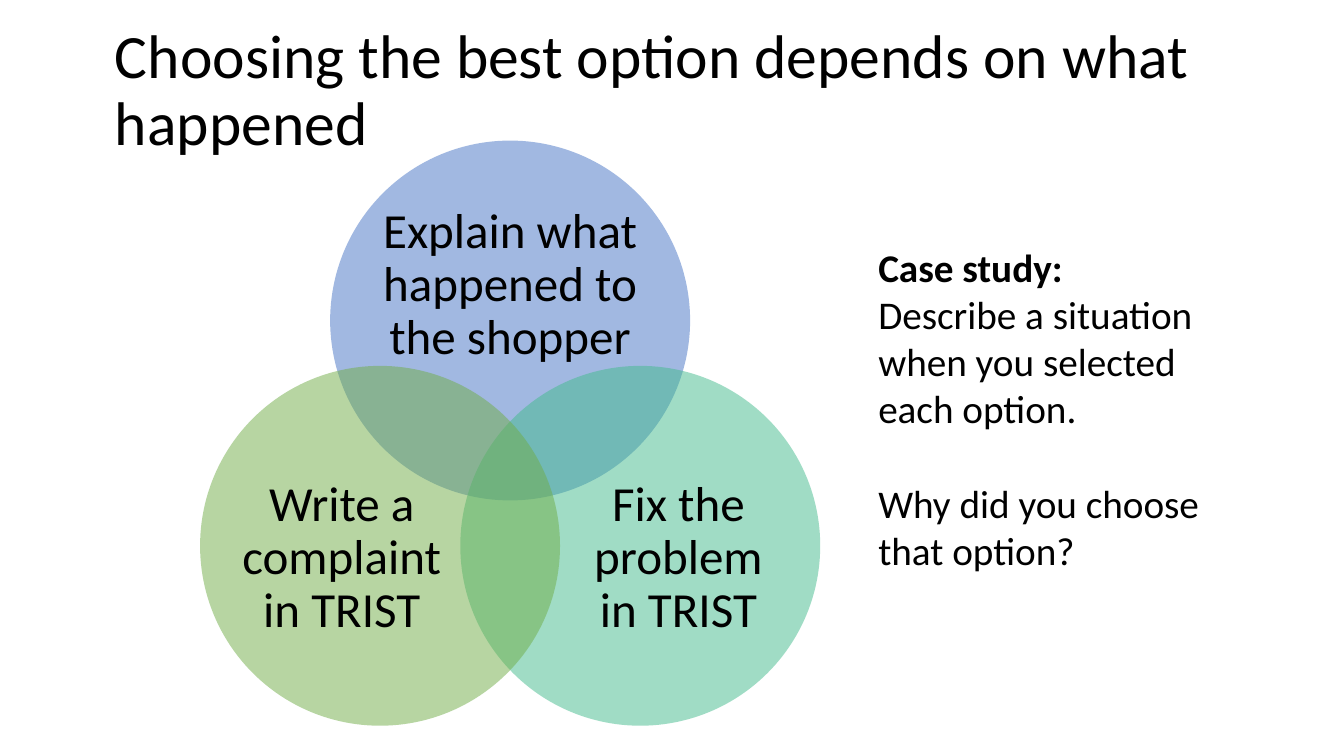
from math import cos, radians, sin

from lxml.etree import SubElement
from pptx import Presentation
from pptx.dml.color import RGBColor
from pptx.enum.shapes import MSO_SHAPE as Shape
from pptx.enum.text import MSO_ANCHOR as Anchor, MSO_AUTO_SIZE as AutoSize, PP_ALIGN as Align
from pptx.oxml.ns import qn
from pptx.util import Inches, Pt

TITLE = "Choosing the best option depends on what happened"
OPTIONS = [
    ("Explain what happened to the shopper", "4472C4", -90, (3.75, 2.03, 2.62, 1.61)),
    ("Fix the problem in TRIST", "43BB8D", 30, (5.66, 4.56, 2.14, 1.96)),
    ("Write a complaint in TRIST", "70AD47", 150, (2.32, 4.56, 2.14, 1.96)),
]
CASE_STUDY = [
    ("Case study:", True, 0),
    ("Describe a situation when you selected each option.", False, 0),
    ("Why did you choose that option?", False, 34),
]
VENN_X, VENN_Y = 5.06, 4.67
DIAMETER, OFFSET = 3.57, 1.49


def color(value):
    return RGBColor.from_string(value)


def inches(box):
    return [Inches(length) for length in box]


def add_text(paragraph, text, size, align=Align.LEFT, bold=False):
    paragraph.alignment = align
    run = paragraph.add_run()
    run.text = text
    run.font.name = "Calibri"
    run.font.size = Pt(size)
    run.font.bold = bold
    run.font.color.rgb = color("000000")


def add_panel(shapes, kind, box, fill):
    shape = shapes.add_shape(kind, *inches(box))
    shape.shadow.inherit = False
    shape.fill.solid()
    shape.fill.fore_color.rgb = color(fill)
    shape.line.fill.background()
    return shape


def add_option(group, text, fill, angle, label_box):
    left = VENN_X + OFFSET * cos(radians(angle)) - DIAMETER / 2
    top = VENN_Y + OFFSET * sin(radians(angle)) - DIAMETER / 2
    circle = add_panel(group.shapes, Shape.OVAL, (left, top, DIAMETER, DIAMETER), fill)
    fill_color = circle.fill._xPr.find(qn("a:solidFill"))[0]
    SubElement(fill_color, qn("a:alpha"), val="50000")

    frame = group.shapes.add_textbox(*inches(label_box)).text_frame
    frame.word_wrap = True
    frame.vertical_anchor = Anchor.MIDDLE
    frame.margin_left = frame.margin_right = frame.margin_top = frame.margin_bottom = 0
    frame.paragraphs[0].line_spacing = 0.9
    add_text(frame.paragraphs[0], text, 35, Align.CENTER)


def main():
    presentation = Presentation()
    presentation.slide_width = Inches(13.33)
    presentation.slide_height = Inches(7.5)
    slide = presentation.slides.add_slide(presentation.slide_layouts[5])

    title = slide.shapes.title
    title.left, title.top, title.width, title.height = inches((1.04, 0.19, 11.5, 1.45))
    title.text_frame.auto_size = AutoSize.NONE
    title.text_frame.vertical_anchor = Anchor.MIDDLE
    title.text_frame.paragraphs[0].line_spacing = 0.9
    add_text(title.text_frame.paragraphs[0], TITLE, 44)

    venn = slide.shapes.add_group_shape()
    for option in OPTIONS:
        add_option(venn, *option)

    panel = add_panel(slide.shapes, Shape.ROUNDED_RECTANGLE, (8.44, 2.28, 4.1, 3.54), "FFFFFF")
    frame = panel.text_frame
    frame.word_wrap = True
    frame.vertical_anchor = Anchor.MIDDLE
    for index, (text, bold, space) in enumerate(CASE_STUDY):
        paragraph = frame.add_paragraph() if index else frame.paragraphs[0]
        paragraph.space_before = Pt(space)
        add_text(paragraph, text, 28, bold=bold)

    presentation.save("out.pptx")


if __name__ == "__main__":
    main()
